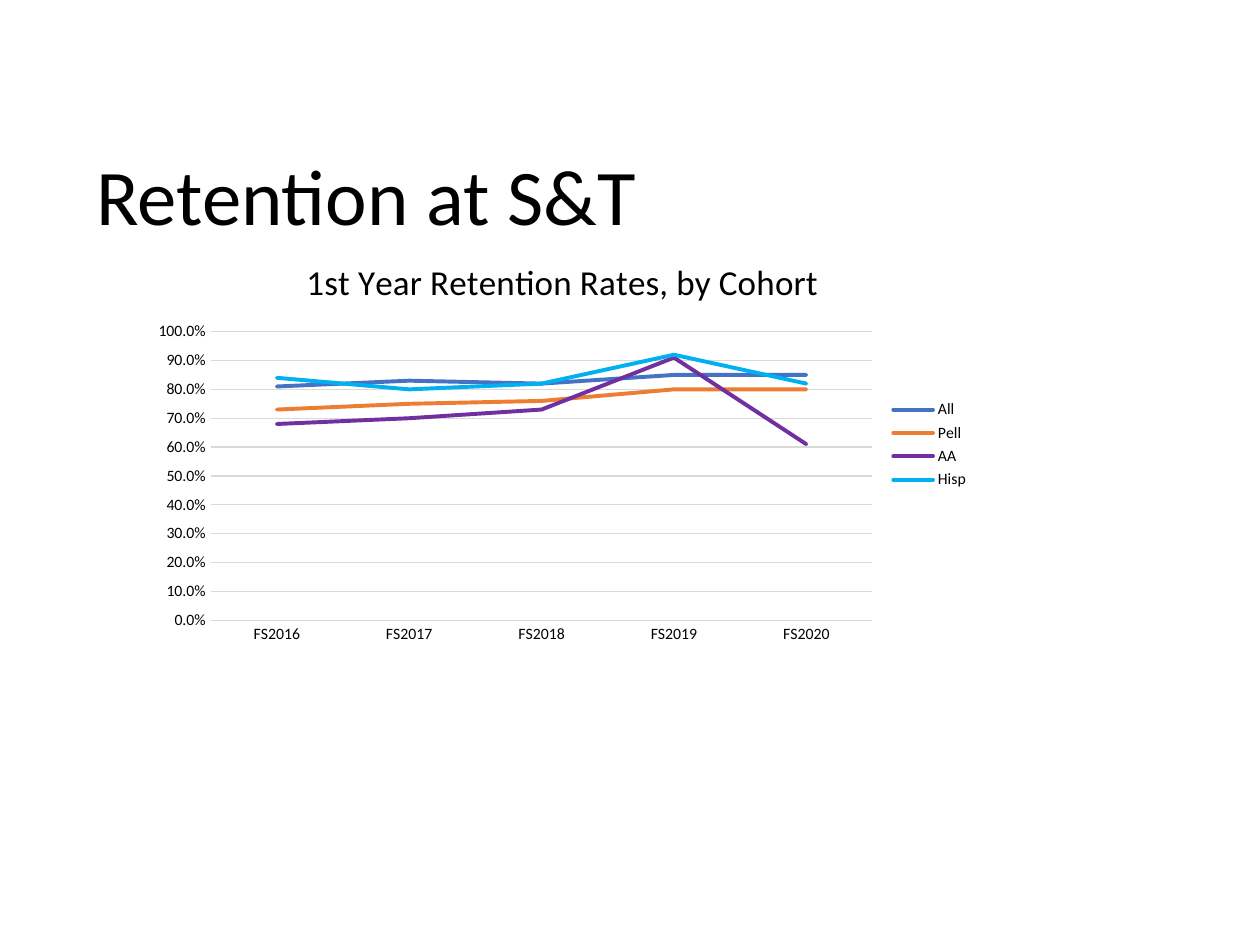
"""Build a slide with a line chart of first-year retention rates by cohort."""
from lxml import etree
from pptx import Presentation
from pptx import util as u
from pptx.chart import data as chart_data
from pptx.dml.color import RGBColor
from pptx.enum import chart as ch, text
from pptx.oxml import ns

COLORS = {
    "text": "000000",
    "grid": "D9D9D9",
    "All": "4472C4",
    "Pell": "ED7D31",
    "AA": "7030A0",
    "Hisp": "00B0F0",
}
COHORTS = ["FS2016", "FS2017", "FS2018", "FS2019", "FS2020"]
RATES = {
    "All": [0.81, 0.83, 0.82, 0.85, 0.85],
    "Pell": [0.73, 0.75, 0.76, 0.80, 0.80],
    "AA": [0.68, 0.70, 0.73, 0.91, 0.61],
    "Hisp": [0.84, 0.80, 0.82, 0.92, 0.82],
}
PLOT_AREA = {"x": 0.08, "y": 0.23, "w": 0.79, "h": 0.69}


class SlideBuilder:
    """Holds the style and the current slide."""

    font_name = "Calibri"

    def __init__(self, slide):
        self.slide = slide

    def style_font(self, font, size):
        font.name = self.font_name
        font.size = u.Pt(size)
        font.bold = False
        font.color.rgb = RGBColor.from_string(COLORS["text"])

    def style_line(self, line, color, width):
        line.color.rgb = RGBColor.from_string(COLORS[color])
        line.width = u.Pt(width)

    def add_title(self, wording, left, top, width, height):
        heading = self.slide.shapes.title
        heading.left, heading.top = u.Pt(left), u.Pt(top)
        heading.width, heading.height = u.Pt(width), u.Pt(height)
        frame = heading.text_frame
        frame.text = wording
        frame.auto_size = text.MSO_AUTO_SIZE.NONE
        frame.vertical_anchor = text.MSO_ANCHOR.BOTTOM
        frame.margin_left = frame.margin_right = u.Pt(5.4)
        frame.margin_top = frame.margin_bottom = u.Pt(2.7)
        line = frame.paragraphs[0]
        line.alignment = text.PP_ALIGN.LEFT
        line.line_spacing = 0.8
        self.style_font(line.runs[0].font, 45)

    def add_line_chart(self, wording, categories, rates, left, top, width, height):
        cohort_data = chart_data.CategoryChartData(number_format="0.0%")
        cohort_data.categories = categories
        for group, values in rates.items():
            cohort_data.add_series(group, values)
        chart = self.slide.shapes.add_chart(
            ch.XL_CHART_TYPE.LINE,
            u.Pt(left), u.Pt(top), u.Pt(width), u.Pt(height), cohort_data,
        ).chart
        self.style_font(chart.font, 10)
        chart.has_title = True
        chart.chart_title.include_in_layout = False
        caption = chart.chart_title.text_frame
        caption.text = wording
        self.style_font(caption.paragraphs[0].runs[0].font, 20)
        chart.has_legend = True
        chart.legend.position = ch.XL_LEGEND_POSITION.RIGHT
        chart.legend.include_in_layout = False
        self.style_font(chart.legend.font, 9)
        self.style_axes(chart)
        plot = chart.plots[0]
        plot.vary_by_categories = False
        for series in plot.series:
            series.smooth = False
            series.marker.style = ch.XL_MARKER_STYLE.NONE
            self.style_line(series.format.line, series.name, 2.25)
        for stroke in chart.element.xpath(".//c:ser/c:spPr/a:ln"):
            stroke.set("cap", "rnd")
        self.place_plot_area(chart, PLOT_AREA)

    def style_axes(self, chart):
        for axis in (chart.category_axis, chart.value_axis):
            axis.major_tick_mark = axis.minor_tick_mark = ch.XL_TICK_MARK.NONE
            self.style_font(axis.tick_labels.font, 9)
        self.style_line(chart.category_axis.format.line, "grid", 0.75)
        rate_axis = chart.value_axis
        rate_axis.minimum_scale, rate_axis.maximum_scale = 0, 1
        rate_axis.major_unit = 0.1
        rate_axis.tick_labels.number_format = "0.0%"
        rate_axis.tick_labels.number_format_is_linked = False
        rate_axis.format.line.fill.background()
        rate_axis.has_major_gridlines = True
        self.style_line(rate_axis.major_gridlines.format.line, "grid", 0.75)

    def place_plot_area(self, chart, fractions):
        plot_area = chart.element.xpath(".//c:plotArea")[0]
        for old_layout in plot_area.findall(ns.qn("c:layout")):
            plot_area.remove(old_layout)
        layout = etree.Element(ns.qn("c:layout"))
        manual = etree.SubElement(layout, ns.qn("c:manualLayout"))
        settings = {"layoutTarget": "inner", "xMode": "edge", "yMode": "edge"}
        for tag, value in {**settings, **fractions}.items():
            etree.SubElement(manual, ns.qn(f"c:{tag}")).set("val", str(value))
        plot_area.insert(0, layout)


def main():
    deck = Presentation()
    deck.slide_width, deck.slide_height = u.Pt(720), u.Pt(540)
    builder = SlideBuilder(deck.slides.add_slide(deck.slide_layouts[5]))
    builder.add_title("Retention at S&T", 49.7, 89.3, 620.6, 51.1)
    builder.add_line_chart(
        "1st Year Retention Rates, by Cohort", COHORTS, RATES,
        82.1, 134.6, 478.8, 239,
    )
    deck.save("out.pptx")


if __name__ == "__main__":
    main()
